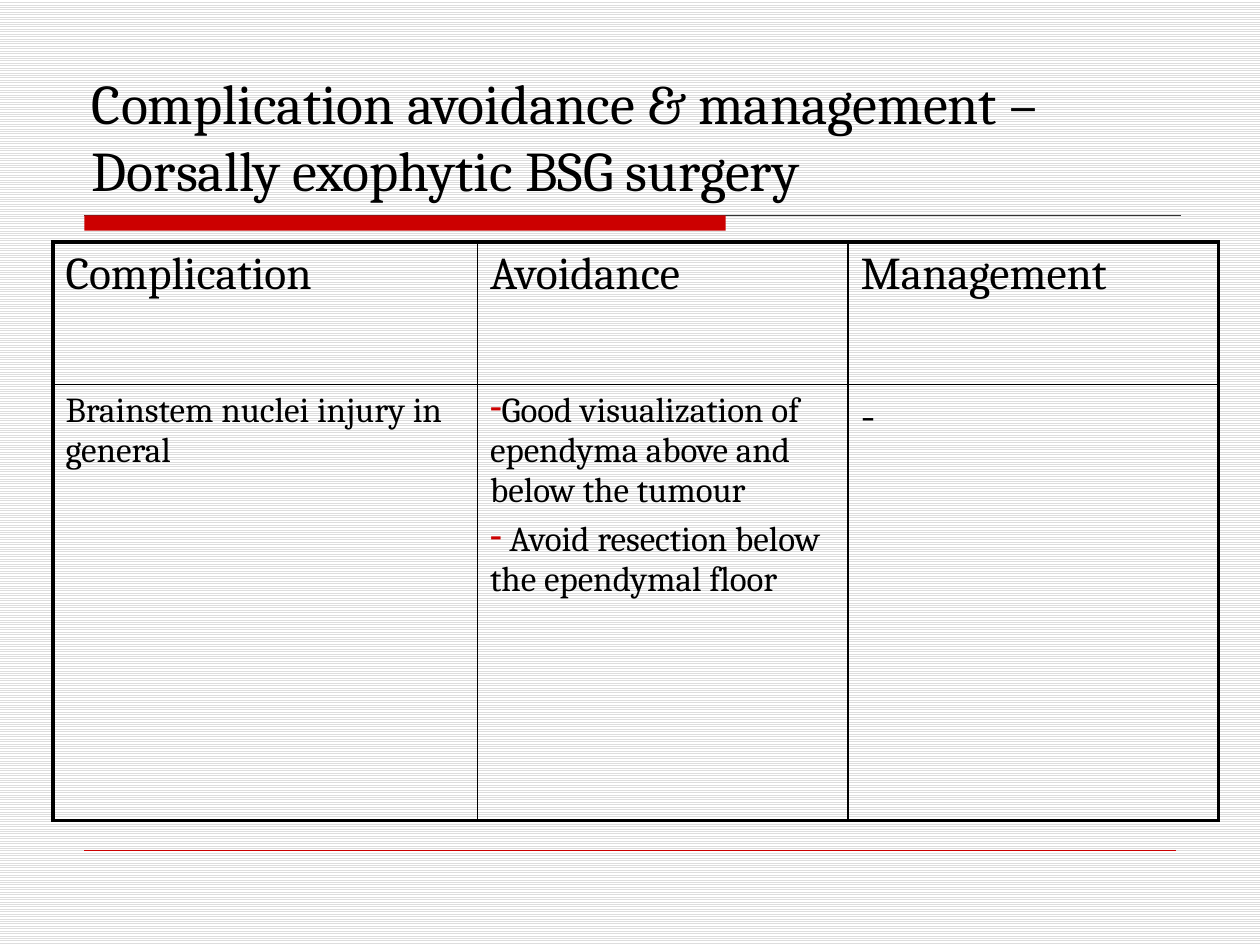
"""Build the slide on complications of dorsally exophytic BSG surgery."""
import lxml.etree
import pptx
import pptx.dml.color
import pptx.enum.dml
import pptx.enum.text
import pptx.oxml
import pptx.oxml.ns
import pptx.util
from pptx.util import Inches

BLACK = "000000"
RED = "CC0000"
HEADINGS = ["Complication", "Avoidance", "Management"]
AVOIDANCE = [
    "Good visualization of ependyma above and below the tumour",
    " Avoid resection below the ependymal floor",
]


def rgb(value):
    """Turn a hex string into a colour."""
    return pptx.dml.color.RGBColor.from_string(value)


def add_xml(parent, tag, **attributes):
    """Append a DrawingML element and return it."""
    return lxml.etree.SubElement(parent, pptx.oxml.ns.qn(tag), attributes)


def write(frame, lines, size=20, font="Cambria", color=BLACK, before=0, bullet=None):
    """Fill a text frame with one formatted paragraph per line."""
    for index, line in enumerate(lines):
        paragraph = frame.paragraphs[0] if index == 0 else frame.add_paragraph()
        paragraph.text = line
        paragraph.alignment = pptx.enum.text.PP_ALIGN.LEFT
        paragraph.space_before = pptx.util.Pt(before)
        for run in paragraph.runs:
            run.font.size = pptx.util.Pt(size)
            run.font.name = font
            run.font.color.rgb = rgb(color)
        if bullet:
            properties = paragraph._p.get_or_add_pPr()
            properties.set("marL", "0")
            properties.set("indent", "0")
            add_xml(add_xml(properties, "a:buClr"), "a:srgbClr", val=RED)
            add_xml(properties, "a:buChar", char=bullet)


def paint_background(slide):
    """Give the slide fine grey horizontal lines."""
    fill = slide.background.fill
    fill.patterned()
    fill.pattern = pptx.enum.dml.MSO_PATTERN.LIGHT_HORIZONTAL
    fill.fore_color.rgb = rgb("DDDDDD")
    fill.back_color.rgb = rgb("FFFFFF")


def add_rule(slide, left, right, top, color, weight):
    """Draw a horizontal line."""
    rule = slide.shapes.add_connector(
        pptx.enum.shapes.MSO_CONNECTOR.STRAIGHT,
        Inches(left), Inches(top), Inches(right), Inches(top))
    rule.line.color.rgb = rgb(color)
    rule.line.width = pptx.util.Pt(weight)
    add_xml(rule._element.spPr, "a:effectLst")


def add_bar(slide, left, top, width, height):
    """Draw the solid bar under the title."""
    bar = slide.shapes.add_shape(
        pptx.enum.shapes.MSO_SHAPE.RECTANGLE,
        Inches(left), Inches(top), Inches(width), Inches(height))
    bar.shadow.inherit = False
    bar.fill.solid()
    bar.fill.fore_color.rgb = rgb(RED)
    bar.line.fill.background()


def set_title(slide, text):
    """Place and format the title."""
    title = slide.shapes.title
    title.left, title.top = Inches(0.63), Inches(0.33)
    title.width, title.height = Inches(8.75), Inches(1.33)
    frame = title.text_frame
    frame.word_wrap = True
    frame.auto_size = pptx.enum.text.MSO_AUTO_SIZE.NONE
    frame.vertical_anchor = pptx.enum.text.MSO_ANCHOR.BOTTOM
    write(frame, [text], size=32)


def set_borders(cell, outer_sides):
    """Draw the cell's borders, thick on the outer sides."""
    properties = cell._tc.get_or_add_tcPr()
    for side in "LRTB":
        weight = pptx.util.Pt(2.25 if side in outer_sides else 1)
        line = add_xml(properties, f"a:ln{side}", w=str(int(weight)))
        add_xml(add_xml(line, "a:solidFill"), "a:srgbClr", val=BLACK)


def add_complication_table(slide):
    """Add the table of complications, avoidance and management."""
    widths, heights = [3.37, 2.94, 2.94], [1.13, 3.46]
    table = slide.shapes.add_table(
        len(heights), len(widths), Inches(0.42), Inches(1.92),
        Inches(sum(widths)), Inches(sum(heights))).table
    table.first_row = table.horz_banding = False
    for column, width in zip(table.columns, widths):
        column.width = Inches(width)
    for row, height in zip(table.rows, heights):
        row.height = Inches(height)
    for row in range(len(heights)):
        for column in range(len(widths)):
            cell = table.cell(row, column)
            set_borders(cell, "TB"[row] + ["L", "", "R"][column])
            cell.fill.background()
    for column, heading in enumerate(HEADINGS):
        write(table.cell(0, column).text_frame, [heading], size=26, before=6)
    injury, avoidance, management = (cell.text_frame for cell in table.rows[1].cells)
    write(injury, ["Brainstem nuclei injury in general"], before=4.6)
    write(avoidance, AVOIDANCE, before=4.6, bullet="-")
    write(management, ["-"], size=26, before=6)


def main():
    """Build and save the slide."""
    deck = pptx.Presentation()
    deck.slide_width, deck.slide_height = Inches(10), Inches(7.5)
    slide = deck.slides.add_slide(deck.slide_layouts[5])
    paint_background(slide)
    add_rule(slide, 0.67, 9.37, 1.71, "333333", 0.75)
    add_bar(slide, 0.67, 1.71, 5.09, 0.12)
    add_rule(slide, 0.67, 9.33, 6.75, RED, 0.25)
    set_title(slide, "Complication avoidance & management – \nDorsally exophytic BSG surgery")
    add_complication_table(slide)
    deck.save("out.pptx")


if __name__ == "__main__":
    main()
